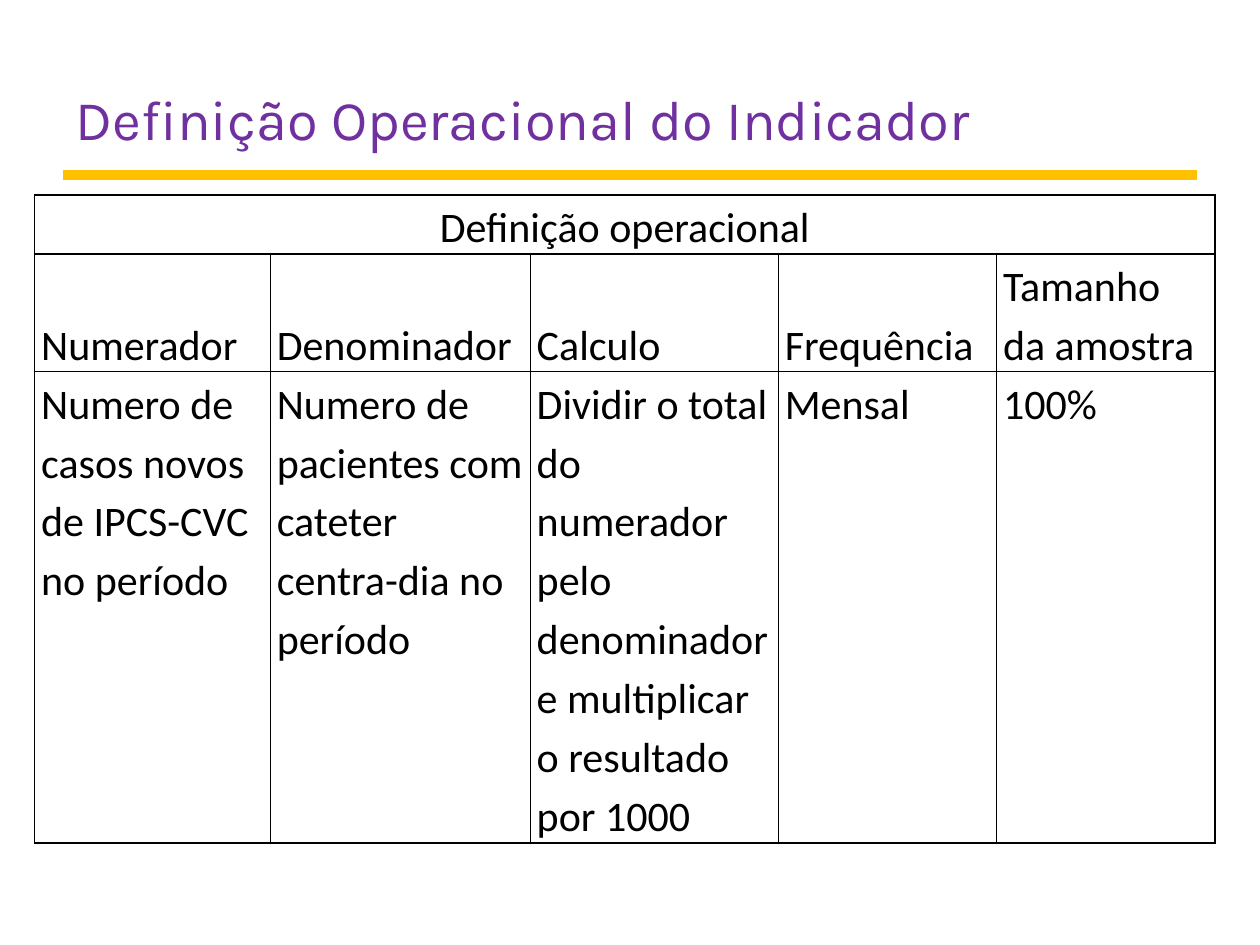
from dataclasses import dataclass
from typing import Any

from lxml.etree import SubElement
from pptx import Presentation
from pptx.dml.color import RGBColor
from pptx.enum.shapes import MSO_CONNECTOR as Connector
from pptx.enum.text import MSO_ANCHOR as Anchor, MSO_AUTO_SIZE as AutoSize, PP_ALIGN as Align
from pptx.oxml.ns import qn
from pptx.util import Cm, Pt


@dataclass(frozen=True)
class Theme:
    """Colours, fonts and sizes of the slide."""
    title_color: RGBColor = RGBColor(0x70, 0x30, 0xA0)
    rule_color: RGBColor = RGBColor(0xFF, 0xC0, 0x00)
    text_color: RGBColor = RGBColor(0, 0, 0)
    border_color: str = "000000"
    title_font: str = "Karla"
    table_font: str = "Calibri"
    title_size: int = 32
    table_size: int = 24
    rule_width: int = 6
    border_width: int = 1


@dataclass(frozen=True)
class Row:
    """One table row: its height in cm, anchor, alignment and texts."""
    height: float
    anchor: Anchor
    align: Align
    texts: tuple[str, ...]


THEME = Theme()
COLUMN_WIDTHS = (4.75, 5.24, 5.0, 4.4, 4.4)
ROWS = (
    Row(1.17, Anchor.MIDDLE, Align.CENTER, ("Definição operacional",)),
    Row(2.34, Anchor.BOTTOM, Align.LEFT,
        ("Numerador", "Denominador", "Calculo", "Frequência", "Tamanho da amostra")),
    Row(9.35, Anchor.TOP, Align.LEFT,
        ("Numero de casos novos de IPCS-CVC no período",
         "Numero de pacientes com cateter centra-dia no período",
         "Dividir o total do numerador pelo denominador e multiplicar o resultado por 1000",
         "Mensal", "100%")),
)


def apply(target: Any, formats: dict[str, Any]) -> None:
    """Set every named attribute on the target."""
    for name, value in formats.items():
        setattr(target, name, value)


def set_font(font: Any, name: str, size: int, color: RGBColor) -> None:
    """Give a font its face, size and colour."""
    apply(font, {"name": name, "size": Pt(size), "bold": False})
    font.color.rgb = color


def add_title(slide: Any, text: str) -> None:
    """Place and format the title placeholder."""
    title = slide.shapes.title
    apply(title, {"left": Cm(1.27), "top": Cm(0.64), "width": Cm(22.86), "height": Cm(2.54)})
    apply(title.text_frame, {
        "text": text, "vertical_anchor": Anchor.BOTTOM, "auto_size": AutoSize.NONE,
        "margin_left": Cm(0.25), "margin_right": Cm(0.25),
        "margin_top": Cm(0.13), "margin_bottom": Cm(0.13)})
    paragraph = title.text_frame.paragraphs[0]
    paragraph.alignment = Align.LEFT
    set_font(paragraph.runs[0].font, THEME.title_font, THEME.title_size, THEME.title_color)


def add_rule(slide: Any) -> None:
    """Draw the thick rule under the title."""
    rule = slide.shapes.add_connector(Connector.STRAIGHT, Cm(1.27), Cm(3.53), Cm(24.13), Cm(3.53))
    rule.line.color.rgb = THEME.rule_color
    rule.line.width = Pt(THEME.rule_width)
    SubElement(rule._element.spPr, qn("a:effectLst"))


def add_borders(cell: Any) -> None:
    """Outline all four sides of a cell."""
    properties = cell._tc.get_or_add_tcPr()
    for side in ("lnL", "lnR", "lnT", "lnB"):
        line = SubElement(properties, qn(f"a:{side}"), w=str(Pt(THEME.border_width)))
        fill = SubElement(line, qn("a:solidFill"))
        SubElement(fill, qn("a:srgbClr"), val=THEME.border_color)


def write_cell(cell: Any, text: str, row: Row) -> None:
    """Fill a cell with text in the style of its row."""
    apply(cell, {"text": text, "vertical_anchor": row.anchor,
                 "margin_left": Cm(0.13), "margin_right": Cm(0.13),
                 "margin_top": 0, "margin_bottom": 0})
    paragraph = cell.text_frame.paragraphs[0]
    apply(paragraph, {"alignment": row.align, "line_spacing": 1.15})
    set_font(paragraph.runs[0].font, THEME.table_font, THEME.table_size, THEME.text_color)


def add_definition_table(slide: Any) -> None:
    """Build the table of the operational definition."""
    table = slide.shapes.add_table(
        len(ROWS), len(COLUMN_WIDTHS), Cm(0.7), Cm(3.93),
        Cm(sum(COLUMN_WIDTHS)), Cm(sum(row.height for row in ROWS))).table
    apply(table, {"first_row": False, "horz_banding": False})
    for column, width in zip(table.columns, COLUMN_WIDTHS):
        column.width = Cm(width)
    for cell in table.iter_cells():
        add_borders(cell)
        cell.fill.background()
    table.cell(0, 0).merge(table.cell(0, len(COLUMN_WIDTHS) - 1))
    for table_row, row in zip(table.rows, ROWS):
        table_row.height = Cm(row.height)
        for cell, text in zip(table_row.cells, row.texts):
            write_cell(cell, text, row)


def main() -> None:
    """Build and save the slide."""
    presentation = Presentation()
    apply(presentation, {"slide_width": Cm(25.4), "slide_height": Cm(19.05)})
    slide = presentation.slides.add_slide(presentation.slide_layouts[5])
    add_rule(slide)
    add_title(slide, "Definição Operacional do Indicador")
    add_definition_table(slide)
    presentation.save("out.pptx")


if __name__ == "__main__":
    main()
